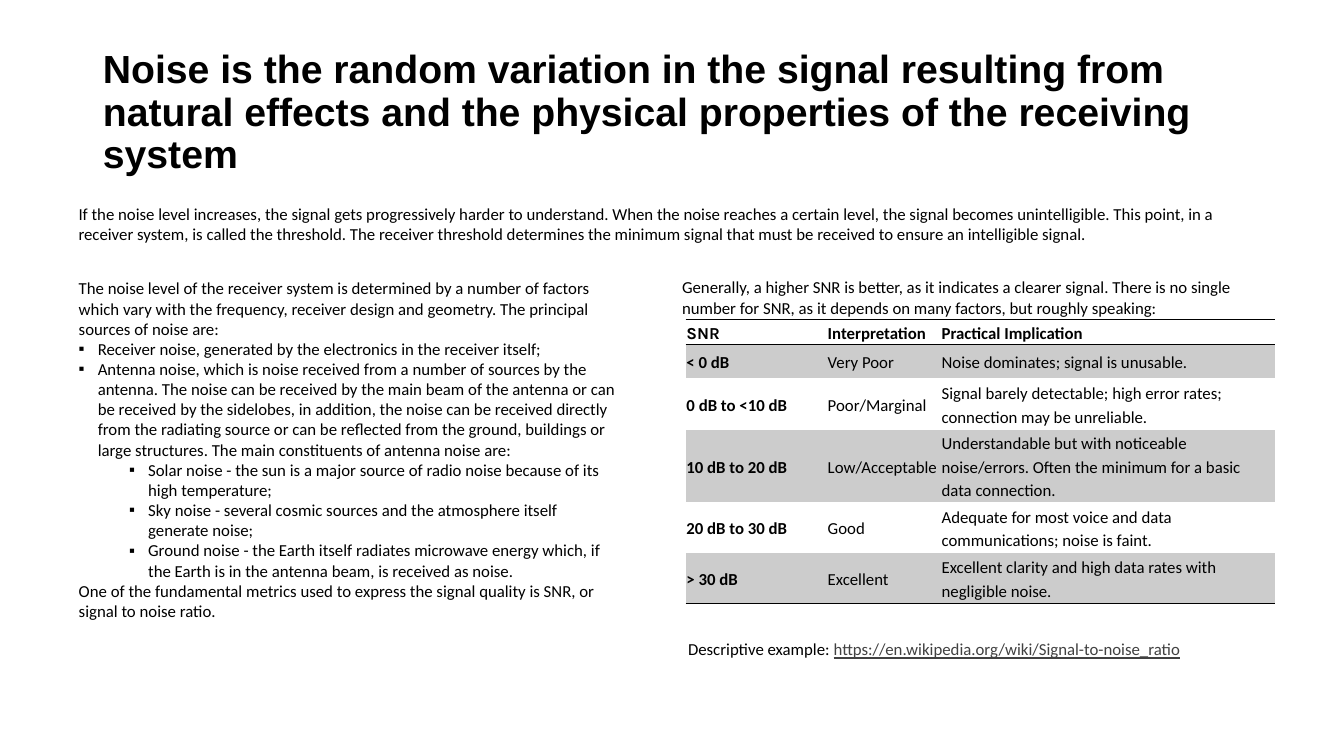
from typing import NamedTuple

import pptx
import pptx.dml.color
import pptx.enum.text
import pptx.oxml
import pptx.oxml.ns
import pptx.util
from pptx.util import Cm

BLACK = pptx.dml.color.RGBColor(0x00, 0x00, 0x00)
BAND_GREY = pptx.dml.color.RGBColor(0xCC, 0xCC, 0xCC)
LINK_GREY = pptx.dml.color.RGBColor(0x41, 0x41, 0x41)
NO_GRID_STYLE = "{2D5ABB26-0587-4C30-8999-92F81FD0307C}"
BULLET_HANG = Cm(0.48)


class Box(NamedTuple):
    left: float
    top: float
    width: float
    height: float


class Item(NamedTuple):
    text: str
    level: int = 0
    indent: float = 0
    bullet: str = ""


class SnrRow(NamedTuple):
    snr: str
    interpretation: str
    implication: str
    height: float


TITLE = (
    "Noise is the random variation in the signal resulting from natural effects "
    "and the physical properties of the receiving system"
)
INTRO = (
    "If the noise level increases, the signal gets progressively harder to understand. "
    "When the noise reaches a certain level, the signal becomes unintelligible. "
    "This point, in a receiver system, is called the threshold. The receiver threshold "
    "determines the minimum signal that must be received to ensure an intelligible signal."
)
SNR_INTRO = (
    "Generally, a higher SNR is better, as it indicates a clearer signal. There is no "
    "single number for SNR, as it depends on many factors, but roughly speaking:"
)


def source(text: str) -> Item:
    return Item(text, 0, 0.48, "▪")


def antenna_part(text: str) -> Item:
    return Item(text, 1, 1.75, "▪")


NOISE_ITEMS = [
    Item(
        "The noise level of the receiver system is determined by a number of factors which "
        "vary with the frequency, receiver design and geometry. The principal sources of "
        "noise are:"
    ),
    source("Receiver noise, generated by the electronics in the receiver itself;"),
    source(
        "Antenna noise, which is noise received from a number of sources by the antenna. "
        "The noise can be received by the main beam of the antenna or can be received by "
        "the sidelobes, in addition, the noise can be received directly from the radiating "
        "source or can be reflected from the ground, buildings or large structures. The "
        "main constituents of antenna noise are:"
    ),
    antenna_part(
        "Solar noise - the sun is a major source of radio noise because of its high "
        "temperature;"
    ),
    antenna_part(
        "Sky noise - several cosmic sources and the atmosphere itself generate noise;"
    ),
    antenna_part(
        "Ground noise - the Earth itself radiates microwave energy which, if the Earth is "
        "in the antenna beam, is received as noise."
    ),
    Item(
        "One of the fundamental metrics used to express the signal quality is SNR, or "
        "signal to noise ratio."
    ),
]

COLUMN_WIDTHS = (3.56, 2.87, 8.43)
SNR_ROWS = [
    SnrRow("SNR", "Interpretation", "Practical Implication", 0.64),
    SnrRow("< 0 dB", "Very Poor", "Noise dominates; signal is unusable.", 0.84),
    SnrRow(
        "0 dB to <10 dB", "Poor/Marginal",
        "Signal barely detectable; high error rates; connection may be unreliable.", 1.3,
    ),
    SnrRow(
        "10 dB to 20 dB", "Low/Acceptable",
        "Understandable but with noticeable noise/errors. Often the minimum for a basic "
        "data connection.", 1.83,
    ),
    SnrRow(
        "20 dB to 30 dB", "Good",
        "Adequate for most voice and data communications; noise is faint.", 1.27,
    ),
    SnrRow(
        "> 30 dB", "Excellent",
        "Excellent clarity and high data rates with negligible noise.", 1.27,
    ),
]


def set_font(font, size: float = 12, name: str = "Calibri", bold: bool = False) -> None:
    font.size = pptx.util.Pt(size)
    font.name = name
    font.bold = bold
    font.color.rgb = BLACK


def place(shape, box: Box) -> None:
    shape.left, shape.top, shape.width, shape.height = map(Cm, box)


def add_text(slide, box: Box, text: str):
    frame = slide.shapes.add_textbox(*map(Cm, box)).text_frame
    frame.word_wrap = True
    paragraph = frame.paragraphs[0]
    paragraph.text = text
    set_font(paragraph.font)
    return paragraph


def add_title(slide) -> None:
    title = slide.shapes.title
    place(title, Box(2.34, 1.02, 29.21, 3.68))
    title.text_frame.auto_size = pptx.enum.text.MSO_AUTO_SIZE.NONE
    title.text_frame.vertical_anchor = pptx.enum.text.MSO_ANCHOR.MIDDLE
    paragraph = title.text_frame.paragraphs[0]
    paragraph.text = TITLE
    paragraph.alignment = pptx.enum.text.PP_ALIGN.LEFT
    paragraph.line_spacing = 0.9
    set_font(paragraph.font, 28, "Arial", True)


def add_noise_list(slide) -> None:
    body = slide.placeholders[1]
    place(body, Box(1.73, 6.88, 14.12, 10.31))
    frame = body.text_frame
    frame.auto_size = pptx.enum.text.MSO_AUTO_SIZE.NONE
    for index, item in enumerate(NOISE_ITEMS):
        paragraph = frame.add_paragraph() if index else frame.paragraphs[0]
        paragraph.text = item.text
        paragraph.level = item.level
        paragraph.space_before = pptx.util.Pt(0)
        properties = paragraph._p.get_or_add_pPr()
        properties.set("marL", str(Cm(item.indent)))
        properties.set("indent", str(-BULLET_HANG if item.bullet else 0))
        if item.bullet:
            bullet = pptx.oxml.ns.qn("a:buChar")
            properties.makeelement(bullet)
            properties.append(properties.makeelement(bullet, {"char": item.bullet}))
        else:
            properties.append(properties.makeelement(pptx.oxml.ns.qn("a:buNone")))
        set_font(paragraph.font)


def add_border(cell, side: str) -> None:
    """Rule one side of a cell, side being a:lnT or a:lnB; call before filling."""
    line = pptx.oxml.parse_xml(
        f'<{side} {pptx.oxml.ns.nsdecls("a")} w="12700"><a:solidFill>'
        f'<a:srgbClr val="{BLACK}"/></a:solidFill></{side}>'
    )
    cell._tc.get_or_add_tcPr().append(line)


def add_snr_table(slide) -> None:
    height = sum(row.height for row in SNR_ROWS)
    box = Box(17.28, 8.05, sum(COLUMN_WIDTHS), height)
    table = slide.shapes.add_table(len(SNR_ROWS), 3, *map(Cm, box)).table
    table.horz_banding = False
    table._tbl.tblPr.find(pptx.oxml.ns.qn("a:tableStyleId")).text = NO_GRID_STYLE
    for column, width in zip(table.columns, COLUMN_WIDTHS):
        column.width = Cm(width)
    for row_index, row in enumerate(SNR_ROWS):
        table.rows[row_index].height = Cm(row.height)
        for column_index, text in enumerate(row[:3]):
            cell = table.cell(row_index, column_index)
            cell.margin_left = cell.margin_right = Cm(0.02)
            cell.margin_top = cell.margin_bottom = Cm(0.02)
            cell.vertical_anchor = pptx.enum.text.MSO_ANCHOR.MIDDLE
            if row_index == 0:
                add_border(cell, "a:lnT")
            if row_index in (0, len(SNR_ROWS) - 1):
                add_border(cell, "a:lnB")
            if row_index % 2:
                cell.fill.solid()
                cell.fill.fore_color.rgb = BAND_GREY
            else:
                cell.fill.background()
            paragraph = cell.text_frame.paragraphs[0]
            paragraph.text = text
            paragraph.line_spacing = 1.15
            name = "Karla" if row_index == column_index == 0 else "Calibri"
            set_font(paragraph.font, 12, name, row_index == 0 or column_index == 0)


def main() -> None:
    presentation = pptx.Presentation()
    presentation.slide_width, presentation.slide_height = Cm(33.87), Cm(19.05)
    slide = presentation.slides.add_slide(presentation.slide_layouts[1])
    add_title(slide)
    add_text(slide, Box(1.73, 5, 30.45, 1.88), INTRO)
    add_noise_list(slide)
    add_snr_table(slide)
    add_text(slide, Box(16.94, 6.86, 15.24, 1.19), SNR_INTRO)
    example = add_text(slide, Box(17.09, 15.98, 15.24, 0.76), "Descriptive example: ")
    link = example.add_run()
    link.text = "https://en.wikipedia.org/wiki/Signal-to-noise_ratio"
    link.font.underline = True
    link.font.color.rgb = LINK_GREY
    presentation.save("out.pptx")


if __name__ == "__main__":
    main()
